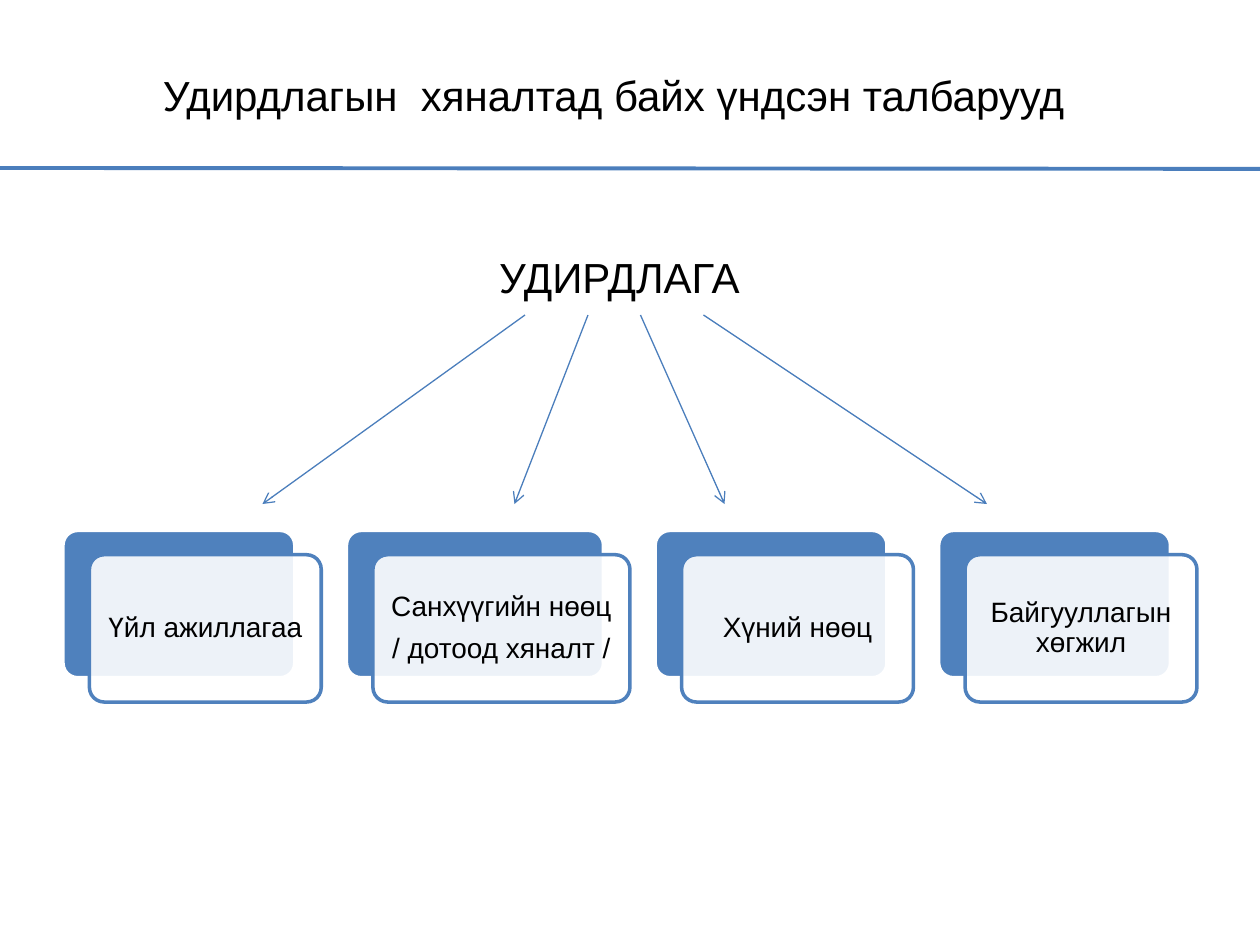
from dataclasses import dataclass

from lxml.etree import SubElement
from pptx import Presentation
from pptx.dml.color import RGBColor
from pptx.enum.shapes import MSO_CONNECTOR as CONN, MSO_SHAPE as SHAPE
from pptx.enum.text import MSO_ANCHOR as ANCHOR, PP_ALIGN as ALIGN
from pptx.oxml.ns import qn
from pptx.util import Pt


@dataclass(frozen=True)
class Theme:
    font: str = "Arial"
    heading: float = 24
    label: float = 16
    text: RGBColor = RGBColor(0, 0, 0)
    white: RGBColor = RGBColor(255, 255, 255)
    blue: RGBColor = RGBColor(0x4F, 0x81, 0xBD)
    line: RGBColor = RGBColor(0x4B, 0x7E, 0xBC)


THEME = Theme()

# Label and total width of each card
CARDS = [
    ("Үйл ажиллагаа", 147.6),
    ("Санхүүгийн нөөц\n/ дотоод хяналт /", 162),
    ("Хүний нөөц", 147.6),
    ("Байгууллагын хөгжил", 147.6),
]
CARD_GAP = 14.4
CARD_SHIFT_X, CARD_SHIFT_Y = 15.1, 13.9

# Horizontal start and end of each arrow
ARROWS = [(300, 150), (336, 294), (366, 414), (402, 564)]


def write(tf, text, size):
    tf.word_wrap = True
    tf.text = text
    for p in tf.paragraphs:
        p.alignment = ALIGN.CENTER
        for r in p.runs:
            r.font.name = THEME.font
            r.font.size = Pt(size)
            r.font.color.rgb = THEME.text


def add_heading(s, text, x, y, w, h, anchor):
    tf = s.shapes.add_textbox(Pt(x), Pt(y), Pt(w), Pt(h)).text_frame
    write(tf, text, THEME.heading)
    tf.vertical_anchor = anchor
    return tf


def add_line(s, x1, y1, x2, y2, width, arrow=False):
    line = s.shapes.add_connector(CONN.STRAIGHT, Pt(x1), Pt(y1), Pt(x2), Pt(y2))
    line.line.color.rgb = THEME.line
    line.line.width = Pt(width)
    if arrow:
        SubElement(line.line._get_or_add_ln(), qn("a:tailEnd"), type="arrow")
    SubElement(line._element.spPr, qn("a:effectLst"))


def add_panel(s, x, y, w, h, fill, outline):
    sp = s.shapes.add_shape(SHAPE.ROUNDED_RECTANGLE, Pt(x), Pt(y), Pt(w), Pt(h))
    sp.adjustments[0] = 0.1
    sp.shadow.inherit = False
    sp.fill.solid()
    sp.fill.fore_color.rgb = fill
    sp.line.color.rgb = outline
    sp.line.width = Pt(2)
    return sp


def add_card(s, text, x, y, w, h):
    """A blue panel with a translucent labelled panel shifted over it."""
    panel_w, panel_h = w - CARD_SHIFT_X, h - CARD_SHIFT_Y
    add_panel(s, x, y, panel_w, panel_h, THEME.blue, THEME.white)
    front = add_panel(s, x + CARD_SHIFT_X, y + CARD_SHIFT_Y, panel_w, panel_h,
                      THEME.white, THEME.blue)
    color = front._element.spPr.find(qn("a:solidFill")).find(qn("a:srgbClr"))
    SubElement(color, qn("a:alpha"), val="90000")

    tf = front.text_frame
    write(tf, text, THEME.label)
    tf.vertical_anchor = ANCHOR.MIDDLE
    tf.margin_left = tf.margin_right = Pt(4.8)
    tf.margin_top = tf.margin_bottom = Pt(4.8)
    for p in tf.paragraphs:
        p.line_spacing = 0.9
        p.space_after = Pt(6.4)


def add_title(s, x, y, w, h):
    add_heading(s, "Удирдлагын  хяналтад байх үндсэн талбарууд ",
                x, y, w, h, ANCHOR.MIDDLE)


def add_root(s, x, y, w, h):
    tf = add_heading(s, "УДИРДЛАГА", x, y, w, h, ANCHOR.TOP)
    tf.paragraphs[0].line_spacing = 1.5
    tf.paragraphs[0].space_before = Pt(4.8)


def add_arrows(s, x, y, h):
    for start, end in ARROWS:
        add_line(s, x + start, y, x + end, y + h, 0.75, arrow=True)


def add_cards(s, x, y, h):
    for text, w in CARDS:
        add_card(s, text, x, y, w, h)
        x += w + CARD_GAP


def main():
    prs = Presentation()
    prs.slide_width, prs.slide_height = Pt(720), Pt(540)
    s = prs.slides.add_slide(prs.slide_layouts[6])
    add_title(s, 30, 12, 648, 84)
    add_cards(s, 36, 303.1, 98.1)
    add_arrows(s, 0, 180, 108)
    add_line(s, 0, 96, 720, 96.5, 2.25)
    add_root(s, 30, 126, 648, 90)
    prs.save("out.pptx")


if __name__ == "__main__":
    main()
